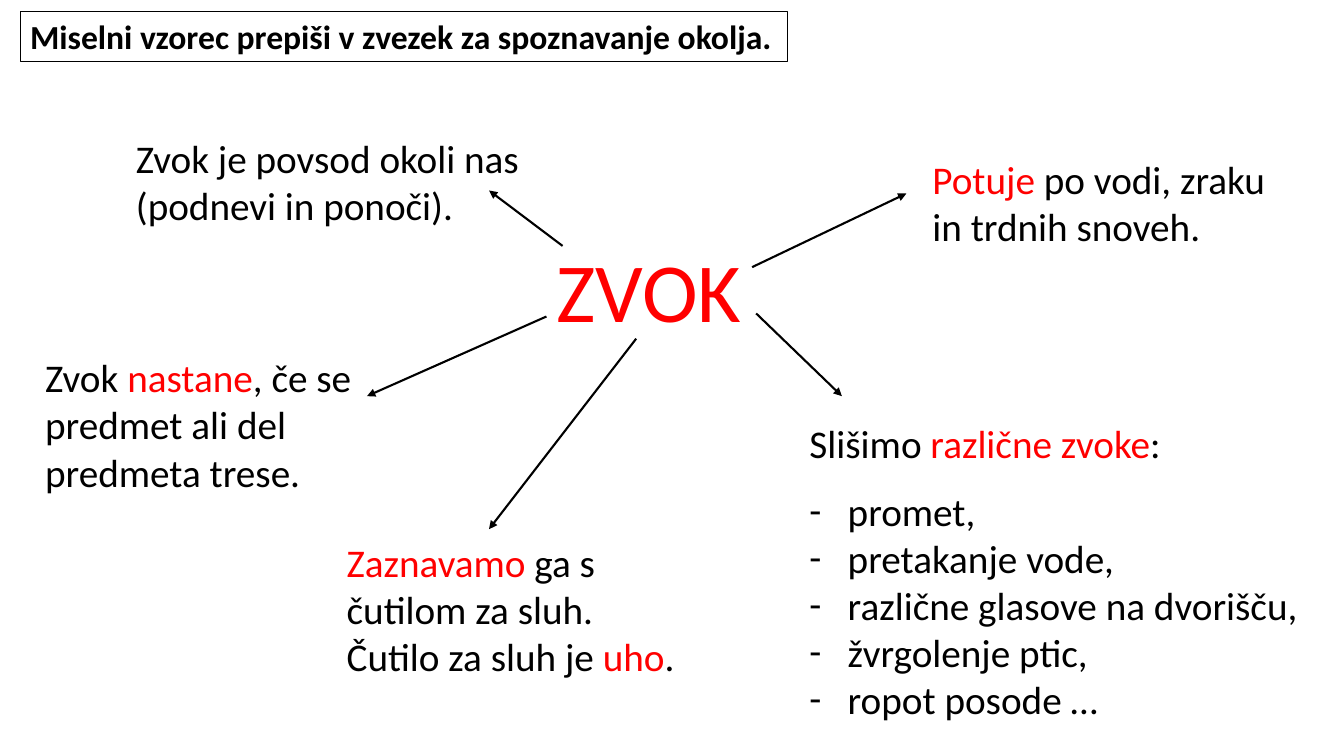
from lxml import etree
from pptx import Presentation
from pptx.dml.color import RGBColor
from pptx.enum.shapes import MSO_CONNECTOR
from pptx.enum.text import MSO_AUTO_SIZE
from pptx.oxml.ns import qn
from pptx.util import Pt

STRAIGHT = MSO_CONNECTOR.STRAIGHT
GROW = MSO_AUTO_SIZE.SHAPE_TO_FIT_TEXT
PX = 9144  # 100 px to the inch
BLACK, RED = "000000", "FF0000"
DASH_INDENT = 38


def color(hex_code):
    return RGBColor.from_string(hex_code)


def add_text(box, paragraphs, size=28, bold=False, fill=BLACK):
    """Add a text box; in each paragraph, words between asterisks are red."""
    shape = slide.shapes.add_textbox(*(v * PX for v in box))
    frame = shape.text_frame
    frame.word_wrap = True
    frame.auto_size = GROW
    for i, text in enumerate(paragraphs):
        paragraph = frame.paragraphs[0] if i == 0 else frame.add_paragraph()
        for j, part in enumerate(text.split("*")):
            if part:
                run = paragraph.add_run()
                run.text = part
                run.font.name = "Calibri"
                run.font.size = Pt(size)
                run.font.bold = bold
                run.font.color.rgb = color(RED if j % 2 else fill)
    return shape


prs = Presentation()
prs.slide_width, prs.slide_height = 1333 * PX, 750 * PX
slide = prs.slides.add_slide(prs.slide_layouts[6])

add_text((542, 232, 306, 111), ["ZVOK"], size=60, fill=RED)

sounds = add_text((793, 404, 667, 321), [
    "Slišimo *različne zvoke*:",
    "promet,",
    "pretakanje vode,",
    "različne glasove na dvorišču,",
    "žvrgolenje ptic,",
    "ropot posode …",
])
lead, *examples = sounds.text_frame.paragraphs
lead.space_after = Pt(10)
lead.line_spacing = examples[0].line_spacing = 1.15
for example in examples:
    properties = example._p.get_or_add_pPr()
    properties.set("marL", str(DASH_INDENT * PX))
    properties.set("indent", str(-DASH_INDENT * PX))
    etree.SubElement(properties, qn("a:buFont"), typeface="Calibri")
    etree.SubElement(properties, qn("a:buChar"), char="-")

facts = [
    ((915, 149, 364, 104), ["*Potuje* po vodi, zraku in trdnih snoveh."]),
    ((35, 346, 393, 151), ["Zvok *nastane*, če se predmet ali del predmeta trese."]),
    ((334, 529, 385, 151), ["*Zaznavamo* ga s čutilom za sluh.", "Čutilo za sluh je *uho*."]),
    ((125, 128, 463, 104), ["Zvok je povsod okoli nas (podnevi in ponoči)."]),
]
for box, paragraphs in facts:
    add_text(box, paragraphs)

arrows = [
    (746, 265, 899, 192),
    (750, 311, 835, 393),
    (558, 244, 485, 189),
    (542, 314, 364, 393),
    (631, 336, 485, 525),
]
for ends in arrows:
    arrow = slide.shapes.add_connector(STRAIGHT, *(v * PX for v in ends))
    arrow.line.color.rgb = color(BLACK)
    arrow.line.width = Pt(1.5)
    etree.SubElement(arrow.line._get_or_add_ln(), qn("a:tailEnd"), type="triangle")
    etree.SubElement(arrow._element.spPr, qn("a:effectLst"))

instruction = add_text((20, 11, 761, 50),
                       ["Miselni vzorec prepiši v zvezek za spoznavanje okolja."],
                       size=24, bold=True)
instruction.line.color.rgb = color(BLACK)
instruction.line.width = Pt(0.75)

prs.save("out.pptx")
